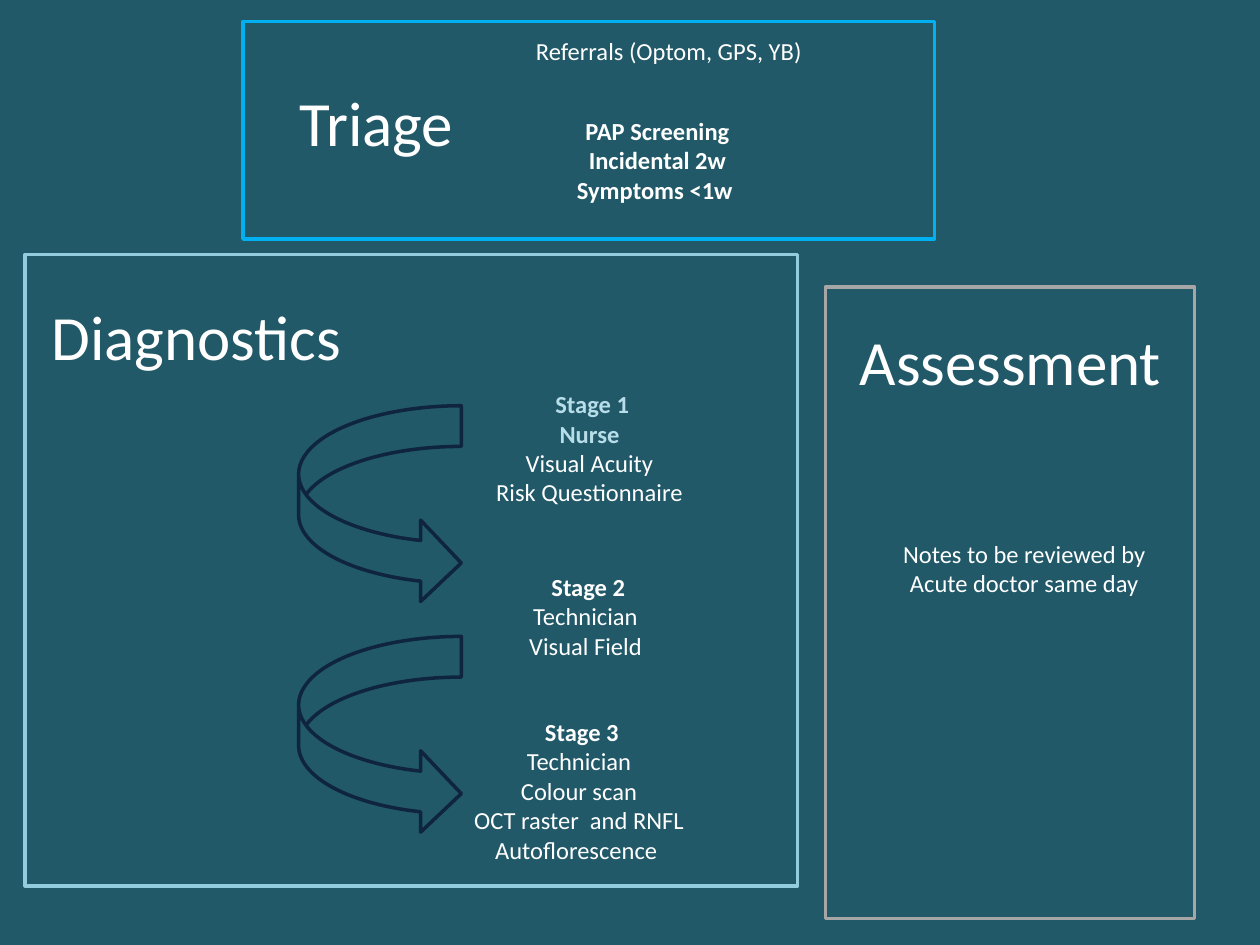
from dataclasses import dataclass

from pptx import Presentation
from pptx import util as u
from pptx.dml.color import RGBColor
from pptx.enum import shapes, text

FONT = "Calibri"
WHITE = "FFFFFF"
PALE_BLUE = "B7DEE8"
NAVY = "0F243E"
BACKGROUND = "215968"
HEADING_SIZE = 36
BODY_SIZE = 14
HEADING_HEIGHT = 1.8
STAGE_WIDTH = 6.4
PANEL_HEIGHT = 12.73
ARROW_LEFT, ARROW_WIDTH, ARROW_HEIGHT = 6.02, 3.28, 3.99


@dataclass
class Box:
    left: float
    top: float
    width: float
    height: float

    def lengths(self) -> tuple:
        return tuple(u.Cm(v) for v in (self.left, self.top, self.width, self.height))


@dataclass
class Line:
    wording: str
    bold: bool = False
    color: str = WHITE


@dataclass
class Note:
    box: Box
    lines: list[Line]


@dataclass
class Heading:
    box: Box
    wording: str


@dataclass
class Outline:
    kind: shapes.MSO_SHAPE
    box: Box
    color: str


def rgb(color: str) -> RGBColor:
    return RGBColor.from_string(color)


def write(frame, lines: list[Line], size: int) -> None:
    frame.word_wrap = True
    frame.vertical_anchor = text.MSO_ANCHOR.TOP
    for index, line in enumerate(lines):
        paragraph = frame.add_paragraph() if index else frame.paragraphs[0]
        paragraph.alignment = text.PP_ALIGN.CENTER
        run = paragraph.add_run()
        run.text = line.wording
        run.font.name = FONT
        run.font.size = u.Pt(size)
        run.font.bold = line.bold
        run.font.color.rgb = rgb(line.color)


def add_note(slide, note: Note) -> None:
    area = slide.shapes.add_textbox(*note.box.lengths())
    write(area.text_frame, note.lines, BODY_SIZE)


def add_heading(slide, heading: Heading) -> None:
    area = slide.shapes.add_textbox(*heading.box.lengths())
    write(area.text_frame, [Line(heading.wording)], HEADING_SIZE)


def fill_title(slide, heading: Heading) -> None:
    title = slide.shapes.title
    title.left, title.top, title.width, title.height = heading.box.lengths()
    title.text_frame.auto_size = text.MSO_AUTO_SIZE.NONE
    write(title.text_frame, [Line(heading.wording)], HEADING_SIZE)


def add_outline(slide, outline: Outline) -> None:
    shape = slide.shapes.add_shape(outline.kind, *outline.box.lengths())
    shape.shadow.inherit = False
    shape.fill.background()
    shape.line.color.rgb = rgb(outline.color)
    shape.line.width = u.Pt(2)


RECTANGLE = shapes.MSO_SHAPE.RECTANGLE
CURVED_ARROW = shapes.MSO_SHAPE.CURVED_RIGHT_ARROW

TRIAGE = Heading(Box(5.38, 1.55, 4.42, HEADING_HEIGHT), "Triage")
HEADINGS = [
    Heading(Box(0.41, 5.87, 7.09, HEADING_HEIGHT), "Diagnostics"),
    Heading(Box(16.89, 6.38, 6.96, HEADING_HEIGHT), "Assessment"),
]
PANELS = [
    Outline(RECTANGLE, Box(0.51, 5.13, 15.57, PANEL_HEIGHT), "93CDDD"),
    Outline(RECTANGLE, Box(16.64, 5.79, 7.44, PANEL_HEIGHT), "A6A6A6"),
    Outline(RECTANGLE, Box(4.9, 0.43, 13.94, 4.39), "00B0F0"),
]
STAGE_ARROWS = [
    Outline(CURVED_ARROW, Box(ARROW_LEFT, top, ARROW_WIDTH, ARROW_HEIGHT), NAVY)
    for top in (8.18, 12.83)
]
NOTES = [
    Note(Box(10.49, 0.61, 5.99, 0.86), [Line("Referrals (Optom, GPS, YB)")]),
    Note(
        Box(10.26, 2.21, 5.99, 2.06),
        [
            Line("PAP Screening", True),
            Line("Incidental 2w", True),
            Line("Symptoms <1w ", True),
        ],
    ),
    Note(
        Box(8.74, 7.72, STAGE_WIDTH, 2.64),
        [
            Line("Stage 1", True, PALE_BLUE),
            Line("Nurse ", True, PALE_BLUE),
            Line("Visual Acuity "),
            Line("Risk Questionnaire "),
        ],
    ),
    Note(
        Box(8.66, 11.4, STAGE_WIDTH, 2.06),
        [Line("Stage 2", True), Line("Technician "), Line("Visual Field ")],
    ),
    Note(
        Box(8.53, 14.33, STAGE_WIDTH, 3.25),
        [
            Line("Stage 3", True),
            Line("Technician "),
            Line("Colour scan "),
            Line("OCT raster  and RNFL "),
            Line("Autoflorescence  "),
        ],
    ),
    Note(
        Box(17.45, 10.74, STAGE_WIDTH, 1.45),
        [Line("Notes to be reviewed by Acute doctor same day")],
    ),
]


def main() -> None:
    deck = Presentation()
    deck.slide_width, deck.slide_height = u.Cm(25.4), u.Cm(19.05)
    slide = deck.slides.add_slide(deck.slide_layouts.get_by_name("Title Only"))
    slide.background.fill.solid()
    slide.background.fill.fore_color.rgb = rgb(BACKGROUND)
    fill_title(slide, TRIAGE)
    for outline in PANELS + STAGE_ARROWS:
        add_outline(slide, outline)
    for heading in HEADINGS:
        add_heading(slide, heading)
    for note in NOTES:
        add_note(slide, note)
    deck.save("out.pptx")


if __name__ == "__main__":
    main()
